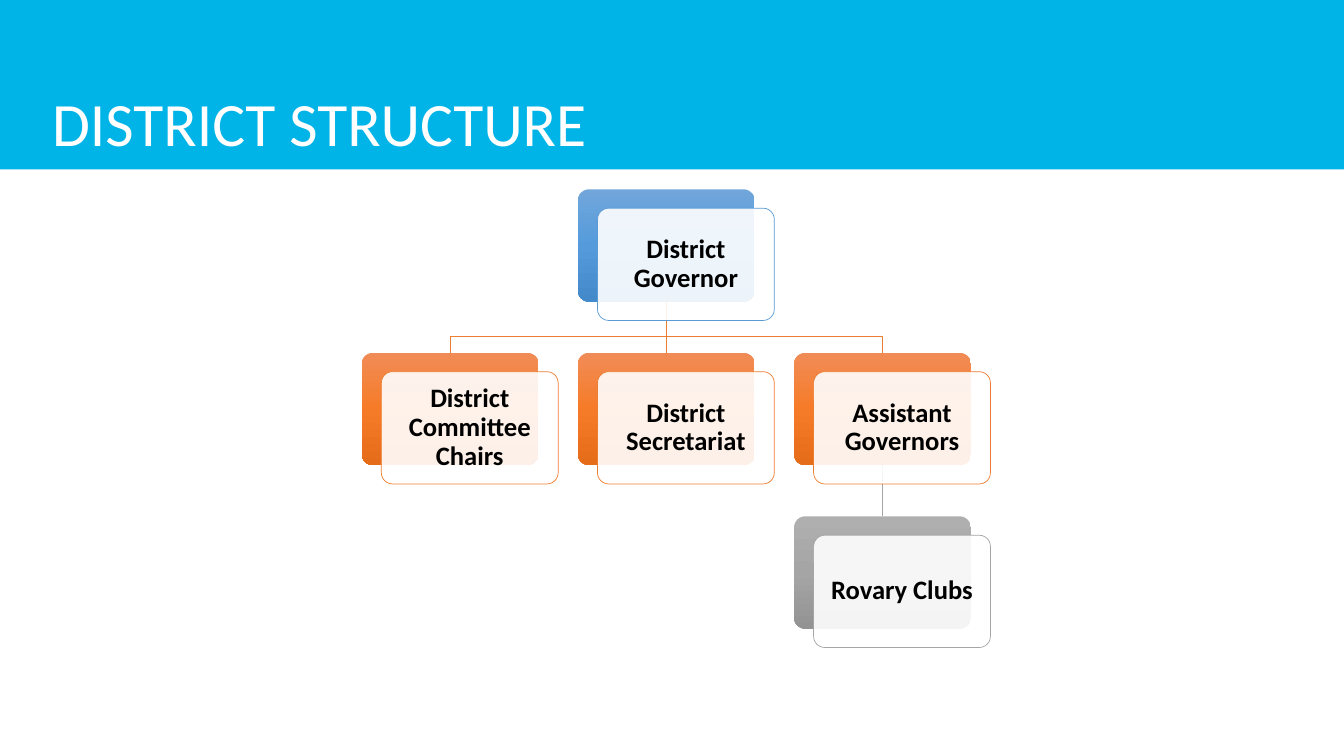
from copy import deepcopy

from pptx import Presentation
from pptx.dml.color import RGBColor
from pptx.enum import shapes, text
from pptx.oxml import ns, xmlchemy
from pptx.util import Pt

COLOURS = {"band": "01B4E7", "white": "FFFFFF", "label": "000000",
           "governor": "5B9BD5", "officers": "ED7D31", "clubs": "A5A5A5"}
GRADIENTS = {"governor": ("71A6DB", "559BDB", "448ACA"),
             "officers": ("F18C57", "F67B28", "E56C19"),
             "clubs": ("AFAFAF", "A5A5A5", "939393")}
CARD_W, CARD_H = 126.3, 80.2
STEP_X, STEP_Y = 154.4, 116.8
SHIFT_X, SHIFT_Y = 14, 13.5
JUNCTION = 25.2
POSTS = [("District Governor", "governor", 1, 0),
         ("District Committee Chairs", "officers", 0, 1),
         ("District Secretariat", "officers", 1, 1),
         ("Assistant Governors", "officers", 2, 1),
         ("Rovary Clubs", "clubs", 2, 2)]


def rgb(name):
    """Return the named colour, or the colour of a bare hex string."""
    return RGBColor.from_string(COLOURS.get(name, name))


def apply(target, values):
    """Set each attribute in values on the target."""
    for name, value in values.items():
        setattr(target, name, value)


def write(frame, wording, size, colour, bold, align, anchor, insets):
    """Write one formatted paragraph into a text frame."""
    sides = ("margin_left", "margin_top", "margin_right", "margin_bottom")
    apply(frame, {"word_wrap": True, "auto_size": text.MSO_AUTO_SIZE.NONE,
                  "vertical_anchor": anchor,
                  **{side: Pt(inset) for side, inset in zip(sides, insets)}})
    frame.text = wording
    paragraph = frame.paragraphs[0]
    apply(paragraph, {"alignment": align, "line_spacing": 0.9, "space_before": Pt(0)})
    apply(paragraph.runs[0].font, {"name": "Calibri", "size": Pt(size), "bold": bold})
    paragraph.runs[0].font.color.rgb = rgb(colour)


def style_line(link, colour):
    """Give a link or outline a thin line without shadow."""
    link.line.color.rgb = rgb(colour)
    link.line.width = Pt(0.5)


def add_header(slide, left, top, width, height):
    """Place the coloured band and the title on it."""
    band = slide.shapes.add_shape(shapes.MSO_SHAPE.RECTANGLE,
                                  Pt(left), Pt(top), Pt(width), Pt(height))
    band.shadow.inherit = False
    band.fill.solid()
    band.fill.fore_color.rgb = rgb("band")
    band.line.fill.background()
    title = slide.shapes.title
    title._element.addprevious(band._element)
    apply(title, {"left": Pt(left + 30), "top": Pt(top),
                  "width": Pt(width - 54), "height": Pt(height)})
    write(title.text_frame, "DISTRICT STRUCTURE", 44, "white", False,
          text.PP_ALIGN.LEFT, text.MSO_ANCHOR.BOTTOM, (7.2, 0, 7.2, 7.2))


def add_card(slide, left, top):
    """Add one rounded card without shadow."""
    card = slide.shapes.add_shape(shapes.MSO_SHAPE.ROUNDED_RECTANGLE,
                                  Pt(left), Pt(top), Pt(CARD_W), Pt(CARD_H))
    card.adjustments[0] = 0.1
    card.shadow.inherit = False
    return card


def add_back(slide, left, top, level):
    """Add the gradient card that lies behind a label."""
    back = add_card(slide, left, top)
    back.line.fill.background()
    back.fill.gradient()
    back.fill.gradient_angle = 270
    stops = back._element.spPr.find(ns.qn("a:gradFill")).find(ns.qn("a:gsLst"))
    stops.append(deepcopy(stops[0]))
    for stop, place, shade in zip(back.fill.gradient_stops, (0, 0.5, 1), GRADIENTS[level]):
        stop.position = place
        stop.color.rgb = rgb(shade)
    return back


def add_label(slide, left, top, wording, level):
    """Add the translucent card that carries a post's name."""
    label = add_card(slide, left, top)
    label.fill.solid()
    label.fill.fore_color.rgb = rgb("white")
    tint = label._element.spPr.find(ns.qn("a:solidFill"))[0]
    tint.append(xmlchemy.OxmlElement("a:alpha"))
    tint[0].set("val", "90000")
    style_line(label, level)
    write(label.text_frame, wording, 19, "label", True,
          text.PP_ALIGN.CENTER, text.MSO_ANCHOR.MIDDLE, (5.4,) * 4)


def add_straight_link(slide, parent, child, colour):
    """Join a parent's bottom to the top of the child below it."""
    link = slide.shapes.add_connector(shapes.MSO_CONNECTOR.STRAIGHT, 0, 0, 0, 0)
    link.begin_connect(parent, 2)
    link.end_connect(child, 0)
    link._element.spPr.append(xmlchemy.OxmlElement("a:effectLst"))
    style_line(link, colour)


def add_bent_link(slide, parent, child, colour):
    """Lead from a parent's bottom, across, and down to a child's top."""
    start_x = parent.left + parent.width // 2
    start_y = parent.top + parent.height
    end_x = child.left + child.width // 2
    bend_y = start_y + Pt(JUNCTION)
    route = slide.shapes.build_freeform(start_x, start_y)
    route.add_line_segments([(start_x, bend_y), (end_x, bend_y), (end_x, child.top)],
                            close=False)
    link = route.convert_to_shape()
    link.fill.background()
    link.shadow.inherit = False
    style_line(link, colour)


def add_structure(slide, left, top):
    """Draw the hierarchy of posts from its top left corner."""
    corners = [(left + column * STEP_X, top + row * STEP_Y)
               for _, _, column, row in POSTS]
    backs = [add_back(slide, x, y, post[1]) for (x, y), post in zip(corners, POSTS)]
    governor, chairs, secretariat, assistants, clubs = backs
    add_straight_link(slide, assistants, clubs, "clubs")
    add_bent_link(slide, governor, assistants, "officers")
    add_straight_link(slide, governor, secretariat, "officers")
    add_bent_link(slide, governor, chairs, "officers")
    for (x, y), (wording, level, _, _) in zip(corners, POSTS):
        add_label(slide, x + SHIFT_X, y + SHIFT_Y, wording, level)


def main():
    """Build and save the slide."""
    deck = Presentation()
    apply(deck, {"slide_width": Pt(960), "slide_height": Pt(540)})
    slide = deck.slides.add_slide(deck.slide_layouts[5])
    add_header(slide, 0, 0, 960, 121)
    add_structure(slide, 258.4, 135.2)
    deck.save("out.pptx")


if __name__ == "__main__":
    main()
